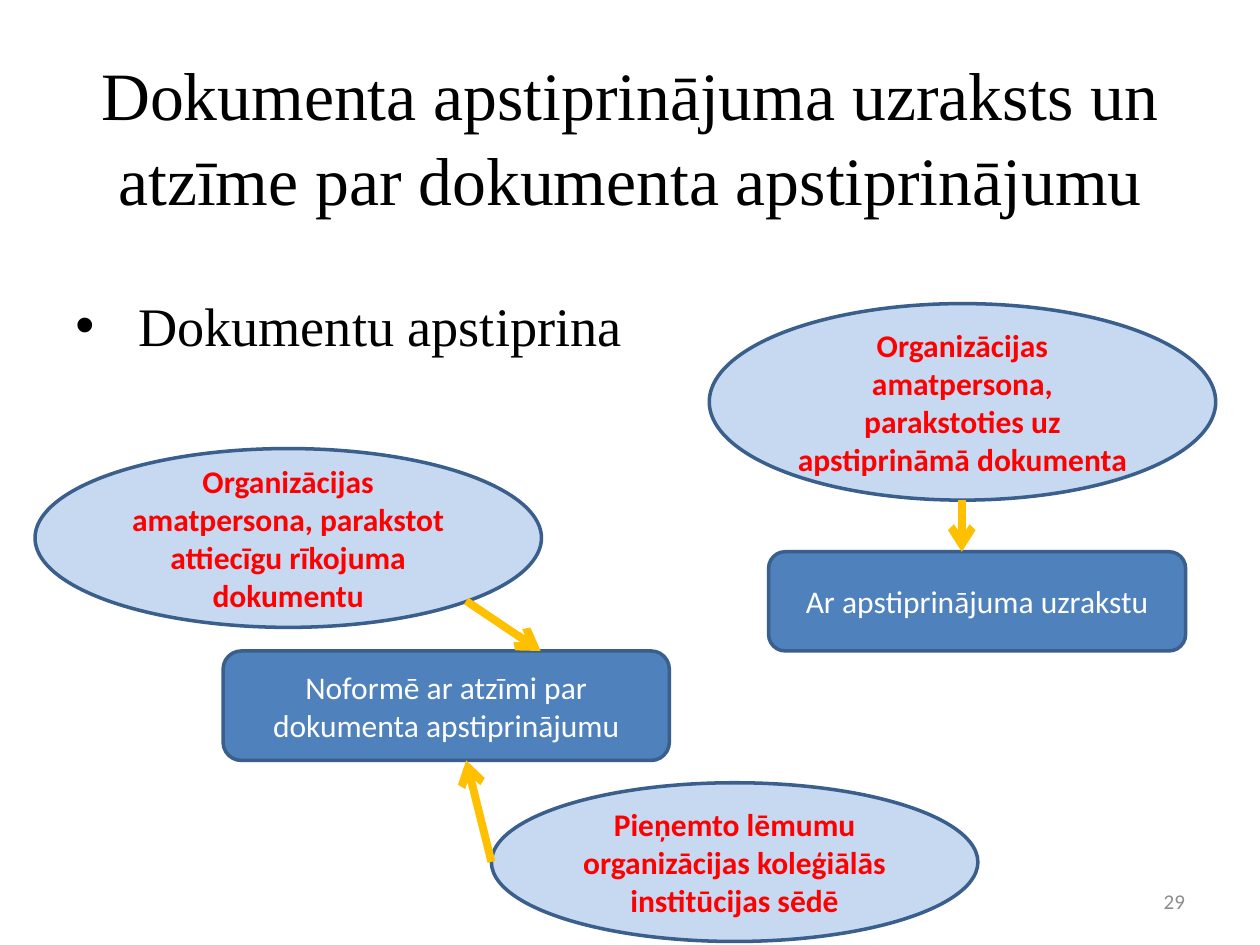
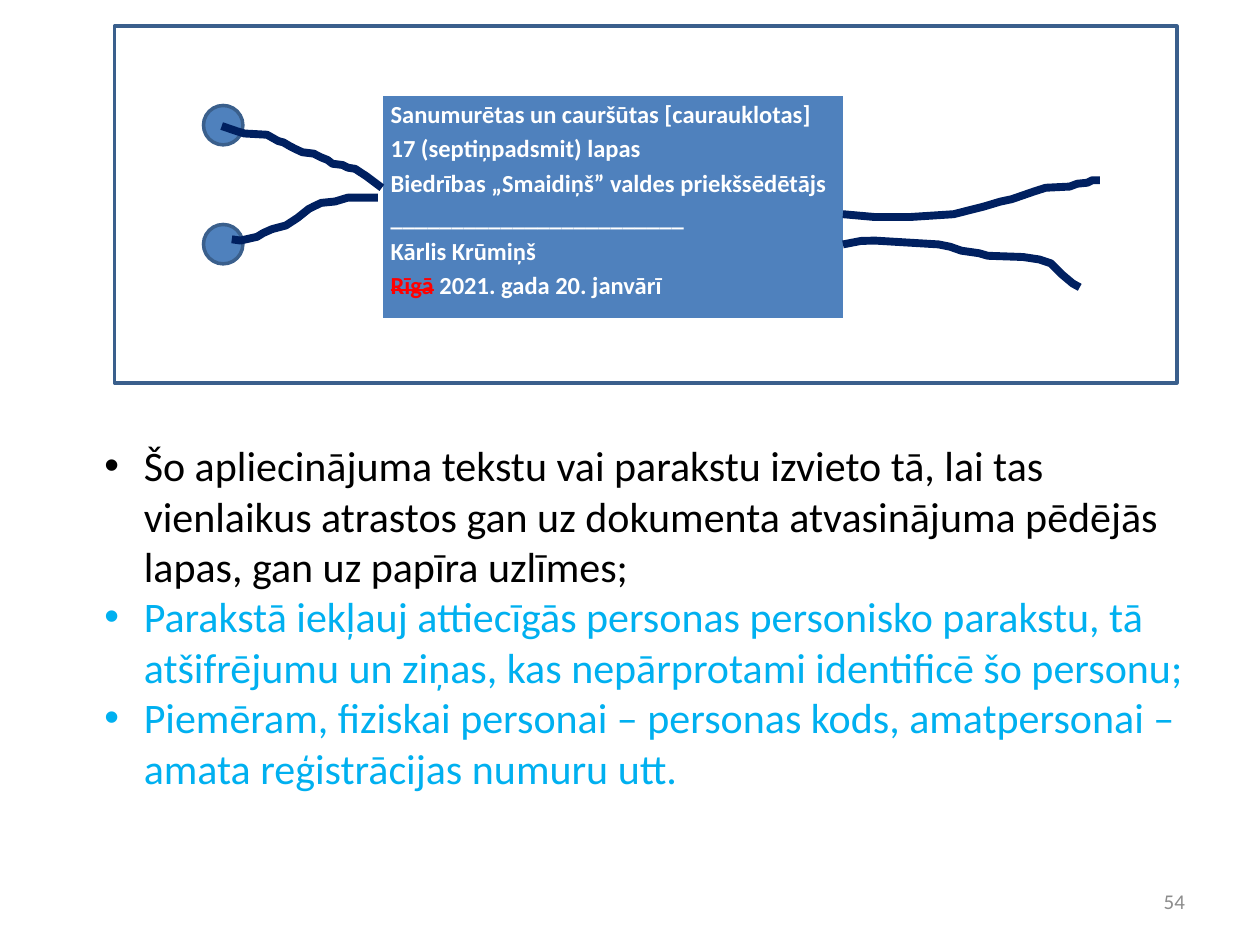
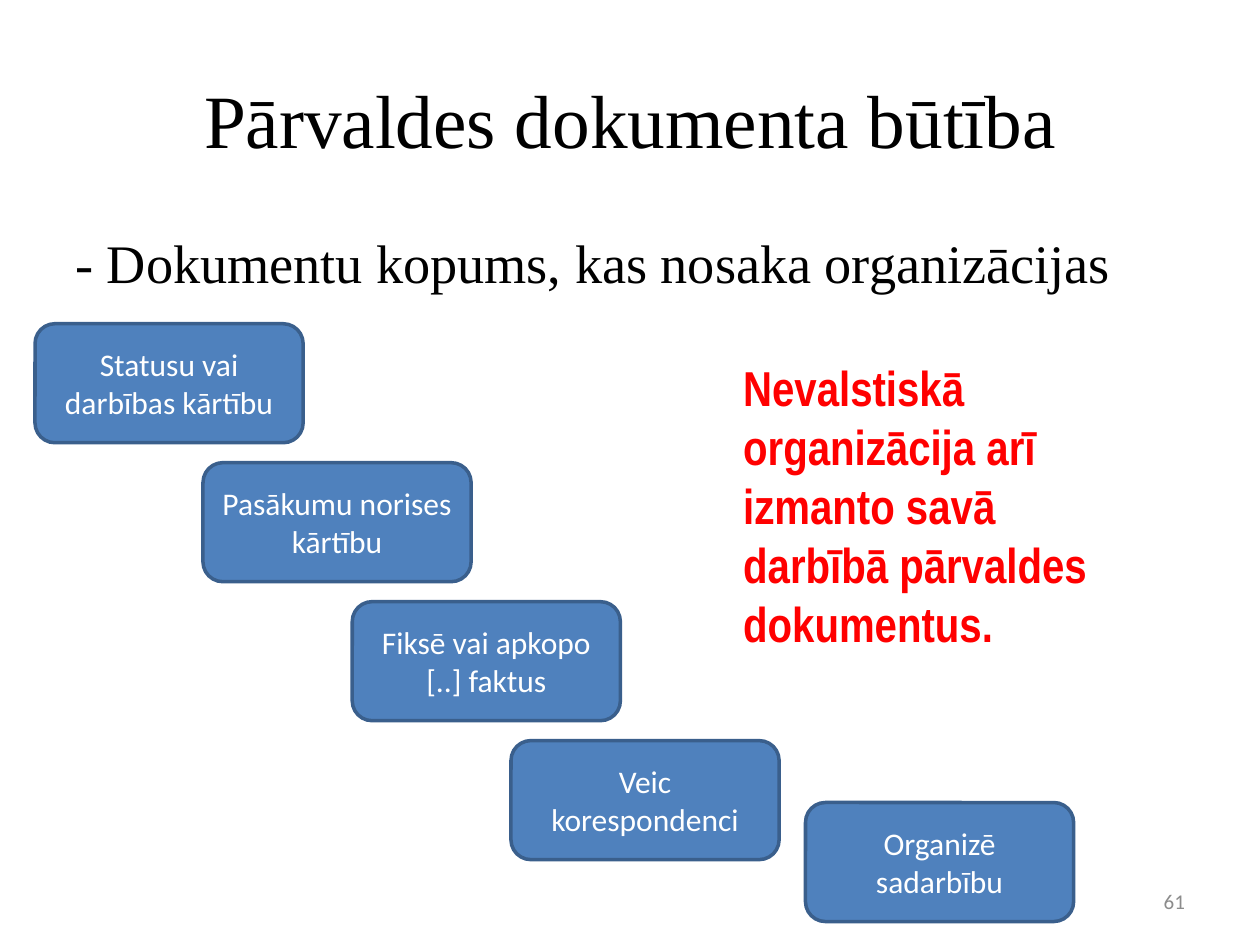
from lxml import etree
from pptx import Presentation
from pptx.dml.color import RGBColor
from pptx.enum.shapes import MSO_CONNECTOR, MSO_SHAPE
from pptx.enum.text import MSO_ANCHOR, PP_ALIGN
from pptx.oxml.ns import qn
from pptx.util import Pt

LEFT, MID, RIGHT = PP_ALIGN.LEFT, PP_ALIGN.CENTER, PP_ALIGN.RIGHT
TOP, CENTRE = MSO_ANCHOR.TOP, MSO_ANCHOR.MIDDLE
OVAL, RECT = MSO_SHAPE.OVAL, MSO_SHAPE.RECTANGLE
ROUND, PROCESS = MSO_SHAPE.ROUNDED_RECTANGLE, MSO_SHAPE.FLOWCHART_ALTERNATE_PROCESS
STRAIGHT = MSO_CONNECTOR.STRAIGHT

HEX = {
    "black": "000000", "white": "FFFFFF", "grey": "8C8C8C", "red": "FF0000",
    "blue": "4F81BD", "edge": "3A5F8C", "pale": "C6D9F1", "gold": "FFC000",
    "navy": "002060", "sky": "00B0F0",
}
SANS, SERIF, NARROW = "Calibri", "Times New Roman", "Arial Narrow"


def rgb(name):
    return RGBColor.from_string(HEX[name])


def pts(nums):
    return [Pt(n) for n in nums]


class Deck:
    def __init__(self):
        self.prs = Presentation()
        self.prs.slide_width, self.prs.slide_height = Pt(720), Pt(540)
        self.slide = None

    def page(self, num):
        """Start a slide that carries its number in the footer."""
        self.slide = self.prs.slides.add_slide(self.prs.slide_layouts[6])
        self.text((516.2, 500.5, 168, 28.8), [[(str(num), "grey")]], 12,
                  align=RIGHT, anchor=CENTRE)

    def put(self, frame, paras, size, font=SANS, bold=False, align=LEFT,
            lead=None, before=0, hang=0):
        """Fill a frame; each paragraph is a list of (text, colour[, strike])."""
        frame.word_wrap = True
        for i, runs in enumerate(paras):
            para = frame.add_paragraph() if i else frame.paragraphs[0]
            para.alignment = align
            para.space_before = Pt(before)
            if lead:
                para.line_spacing = lead
            if hang:
                self.bullet(para, hang)
            for words, hue, *strike in runs:
                run = para.add_run()
                run.text = words
                run.font.name, run.font.size = font, Pt(size)
                run.font.bold = bold
                run.font.color.rgb = rgb(hue)
                if strike:
                    run._r.get_or_add_rPr().set("strike", "sngStrike")

    def bullet(self, para, hang):
        props = para._p.get_or_add_pPr()
        props.set("marL", str(Pt(hang)))
        props.set("indent", str(-Pt(hang)))
        etree.SubElement(props, qn("a:buFont")).set("typeface", "Arial")
        etree.SubElement(props, qn("a:buChar")).set("char", "•")

    def text(self, box, paras, size, anchor=TOP, **style):
        frame = self.slide.shapes.add_textbox(*pts(box)).text_frame
        frame.vertical_anchor = anchor
        self.put(frame, paras, size, **style)

    def title(self, words, top, size):
        self.text((36, top, 648, 90), [[(words, "black")]], size, anchor=CENTRE,
                  font=SERIF, align=MID, lead=1.04)

    def lead(self, words, top, hang=0):
        self.text((36, top, 648, 74), [[(words, "black")]], 31, font=SERIF,
                  lead=1.04, before=4, hang=hang)

    def shape(self, kind, box, fill=None, words=None, hue="white", bold=False):
        item = self.slide.shapes.add_shape(kind, *pts(box))
        item.shadow.inherit = False
        if fill:
            item.fill.solid()
            item.fill.fore_color.rgb = rgb(fill)
        else:
            item.fill.background()
        self.stroke(item.line, "edge", 2)
        if words:
            item.text_frame.vertical_anchor = CENTRE
            self.put(item.text_frame, [[(words, hue)]], 18, bold=bold, align=MID)

    def stroke(self, line, hue, width):
        line.color.rgb = rgb(hue)
        line.width = Pt(width)

    def arrow(self, *ends):
        item = self.slide.shapes.add_connector(STRAIGHT, *pts(ends))
        self.stroke(item.line, "gold", 4.5)
        props = item._element.spPr
        etree.SubElement(props.find(qn("a:ln")), qn("a:tailEnd")).set("type", "arrow")
        etree.SubElement(props, qn("a:effectLst"))

    def thread(self, dots):
        start, *rest = [pts(dot) for dot in dots]
        pen = self.slide.shapes.build_freeform(*start)
        pen.add_line_segments(rest, close=False)
        item = pen.convert_to_shape()
        item.shadow.inherit = False
        item.fill.background()
        self.stroke(item.line, "navy", 4.5)

    def label(self, box, paras):
        """Add a one-cell table with white borders."""
        table = self.slide.shapes.add_table(1, 1, *pts(box)).table
        table.first_row = table.horz_banding = False
        cell = table.cell(0, 0)
        cell.margin_left = cell.margin_right = Pt(5)
        cell.margin_top = cell.margin_bottom = 0
        self.put(cell.text_frame, paras, 14, bold=True, lead=1.15)
        props = cell._tc.get_or_add_tcPr()
        for side, width in (("L", 1), ("R", 1), ("T", 1), ("B", 3)):
            line = etree.SubElement(props, qn(f"a:ln{side}"), w=str(Pt(width)))
            fill = etree.SubElement(line, qn("a:solidFill"))
            etree.SubElement(fill, qn("a:srgbClr"), val=HEX["white"])
        cell.fill.solid()
        cell.fill.fore_color.rgb = rgb("blue")


def approval(deck):
    deck.page(29)
    deck.title("Dokumenta apstiprinājuma uzraksts un atzīme par dokumenta apstiprinājumu",
               31.7, 38.7)
    deck.lead("Dokumentu apstiprina", 162, hang=36)
    for box, words in (
        ((20, 256.3, 289.4, 102.2),
         "Organizācijas amatpersona, parakstot attiecīgu rīkojuma dokumentu"),
        ((280.8, 447.3, 278, 90.7),
         "Pieņemto lēmumu organizācijas koleģiālās institūcijas sēdē"),
        ((405.3, 173.5, 289.4, 112.3),
         "Organizācijas amatpersona, parakstoties uz apstiprināmā dokumenta"),
    ):
        deck.shape(OVAL, box, "pale", words, "red", True)
    deck.shape(PROCESS, (127.5, 372, 255, 62.6), "blue",
               "Noformē ar atzīmi par dokumenta apstiprinājumu")
    deck.shape(ROUND, (439.2, 315.3, 238.3, 56.7), "blue", "Ar apstiprinājuma uzrakstu")
    deck.arrow(549.6, 285.8, 549.6, 315.3)
    deck.arrow(266.4, 343.4, 309, 372)
    deck.arrow(280.8, 492.5, 266.4, 434.5)


THREADS = (
    ((126.7, 72), (135.4, 75), (139.7, 76.3), (152.6, 77), (159, 80.6), (162, 81.4),
     (165.6, 83.5), (168.5, 85), (172.8, 87), (179.3, 87.8), (183.6, 90), (187.2, 91.4),
     (190, 93.6), (195.8, 94.3), (198.7, 95.8), (203, 96.5), (209.5, 100.8), (218.2, 107.3)),
    ((132.5, 136.8), (137.5, 137.5), (146.9, 135.4), (150.5, 133.2), (155.5, 131),
     (163.4, 128.9), (170, 124.6), (176.4, 119.5), (179.3, 118), (183.6, 116),
     (191.5, 115.2), (198.7, 113), (216, 113)),
    ((481.7, 122.4), (500, 124), (520, 124), (545, 122.4), (553.7, 120.2), (562.3, 118),
     (571.7, 115.2), (578.2, 113.8), (591, 109.4), (597.6, 107.3), (611.3, 106.6),
     (615.6, 105), (621.4, 104.4), (624.2, 103), (628.6, 103)),
    ((481.7, 139.7), (492, 137.7), (500, 137.5), (536.4, 139.7), (542.9, 141),
     (549.4, 143.3), (559.4, 144.7), (564.5, 146.2), (584.6, 146.9), (594, 148.3),
     (600.5, 150.5), (607, 157), (613, 162), (617, 164.2)),
)


def binding(deck):
    deck.page(54)
    lines = (
        "Sanumurētas un cauršūtas [caurauklotas]",
        "17 (septiņpadsmit) lapas",
        "Biedrības „Smaidiņš” valdes priekšsēdētājs",
        "________________________",
        "Kārlis Krūmiņš",
    )
    deck.label((218.2, 54.7, 264.2, 128.2), [[(line, "white")] for line in lines]
               + [[("Rīgā", "red", True), (" 2021. gada 20. janvārī", "white")]])
    deck.text((52.6, 247.7, 640.8, 211), [
        [("Šo apliecinājuma tekstu vai parakstu izvieto tā, lai tas vienlaikus atrastos "
          "gan uz dokumenta atvasinājuma pēdējās lapas, gan uz papīra uzlīmes;", "black")],
        [("Parakstā iekļauj attiecīgās personas personisko parakstu, tā atšifrējumu "
          "un ziņas, kas nepārprotami identificē šo personu;", "sky")],
        [("Piemēram, fiziskai personai – personas kods, amatpersonai – "
          "amata reģistrācijas numuru utt.", "sky")],
    ], 24, hang=22.5)
    deck.shape(RECT, (65.5, 15, 607, 203.8))
    for top in (60.3, 128.3):
        deck.shape(OVAL, (116.3, top, 22.5, 22.5), "blue")
    for dots in THREADS:
        deck.thread(dots)


def essence(deck):
    deck.page(61)
    deck.title("Pārvaldes dokumenta būtība", 21.6, 43)
    deck.lead("- Dokumentu kopums, kas nosaka organizācijas", 126)
    for left, top, words in (
        (20, 185, "Statusu vai darbības kārtību"),
        (116, 264.4, "Pasākumu norises kārtību"),
        (201.3, 343.8, "Fiksē vai apkopo [..] faktus"),
        (292, 423.2, "Veic korespondenci"),
        (460.3, 458.6, "Organizē sadarbību"),
    ):
        deck.shape(ROUND, (left, top, 153.2, 68), "blue", words)
    deck.text((417.6, 201, 238.3, 177), [[
        ("Nevalstiskā organizācija arī izmanto savā darbībā pārvaldes dokumentus.", "red"),
    ]], 28, font=NARROW, bold=True)


def main():
    deck = Deck()
    for build in (approval, binding, essence):
        build(deck)
    deck.prs.save("out.pptx")


if __name__ == "__main__":
    main()
